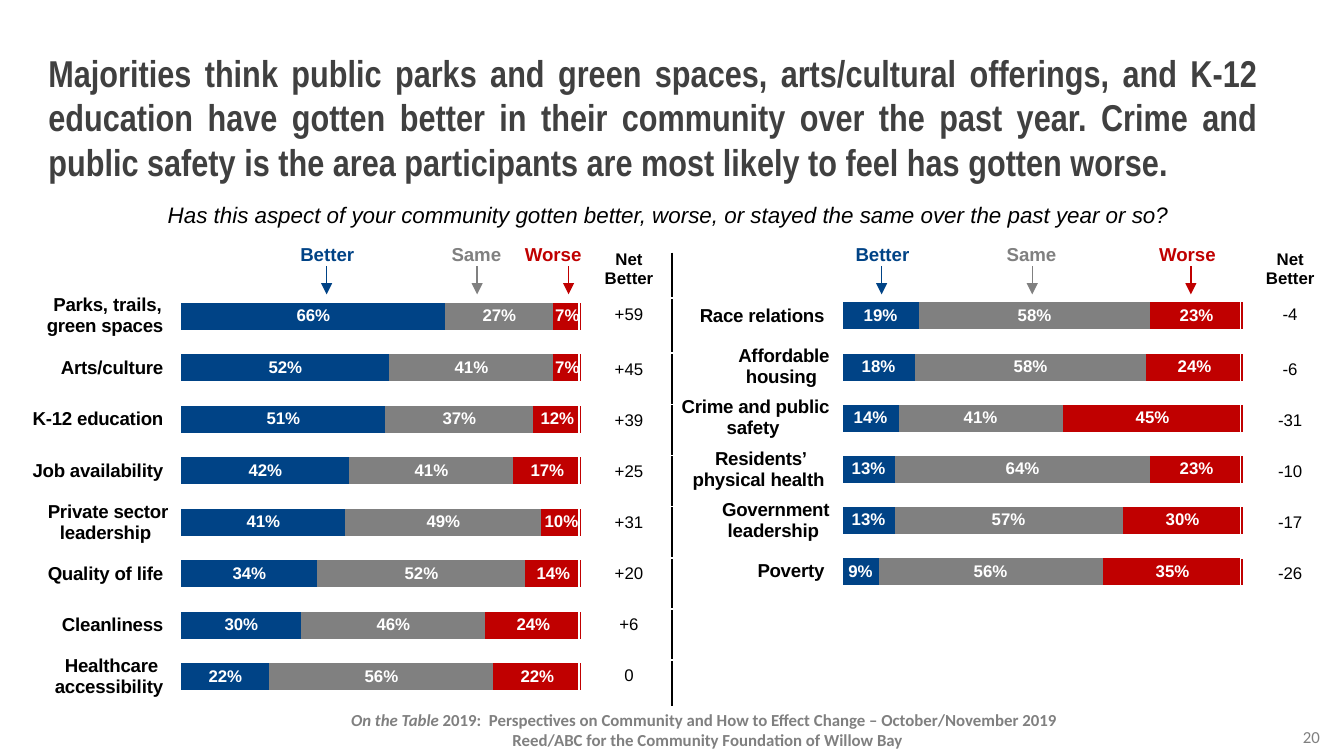
"""Build the survey slide on how aspects of the community have changed."""
from pptx import Presentation
from pptx.chart.data import CategoryChartData as Data
from pptx.dml.color import RGBColor as RGB
from pptx.enum.chart import XL_CHART_TYPE as Kind, XL_TICK_MARK as Mark
from pptx.enum.chart import XL_TICK_LABEL_POSITION as Spot
from pptx.enum.shapes import MSO_CONNECTOR as Link
from pptx.enum.text import MSO_ANCHOR as Anchor, MSO_AUTO_SIZE as Fit, PP_ALIGN as Align
from pptx.oxml import parse_xml
from pptx.oxml.ns import nsdecls, qn
from pptx.util import Pt
from lxml.etree import SubElement as Sub

BLUE = RGB(0x00, 0x43, 0x86)
GRAY = RGB(0x80, 0x80, 0x80)
RED = RGB(0xC0, 0x00, 0x00)
DARK = RGB(0x40, 0x40, 0x40)
BLACK = RGB(0x00, 0x00, 0x00)
WHITE = RGB(0xFF, 0xFF, 0xFF)


def write(para, text, size=9, color=BLACK, name="Arial", bold=False, ital=False, align=Align.CENTER):
    para.alignment = align
    run = para.add_run()
    run.text = text
    font = run.font
    font.size, font.name, font.bold, font.italic = Pt(size), name, bold, ital
    font.color.rgb = color


def draw(x, top, end, color, tip=False):
    line = slide.shapes.add_connector(Link.STRAIGHT, Pt(x), Pt(top), Pt(x), Pt(end))
    line.line.color.rgb = color
    line.line.width = Pt(0.75)
    props = line.element.spPr
    if tip:
        Sub(props.find(qn("a:ln")), qn("a:tailEnd"), type="triangle")
    Sub(props, qn("a:effectLst"))


deck = Presentation()
deck.slide_width, deck.slide_height = Pt(720), Pt(405)
slide = deck.slides.add_slide(deck.slide_layouts[5])

title = slide.shapes.title
title.left, title.top, title.width, title.height = Pt(18.7), Pt(28.8), Pt(662.4), Pt(67.7)
frame = title.text_frame
frame.auto_size, frame.word_wrap, frame.vertical_anchor = Fit.NONE, True, Anchor.MIDDLE
write(frame.paragraphs[0],
      "Majorities think public parks and green spaces, arts/cultural offerings, and K-12 education "
      "have gotten better in their community over the past year. Crime and public safety is the area "
      "participants are most likely to feel has gotten worse.",
      size=20, color=DARK, name="Arial Narrow", bold=True, align=Align.JUSTIFY)

foot = slide.shapes.add_textbox(Pt(177.8), Pt(376.6), Pt(400.3), Pt(28.8)).text_frame
foot.word_wrap = False
look = dict(color=GRAY, name="Calibri", bold=True)
write(foot.paragraphs[0], "On the Table", ital=True, **look)
write(foot.paragraphs[0], " 2019:  Perspectives on Community and How to Effect Change "
      "– October/November 2019 ", **look)
write(foot.add_paragraph(), " Reed/ABC for the Community Foundation of Willow Bay", **look)

page = slide.shapes.add_textbox(Pt(668.2), Pt(385.9), Pt(46), Pt(18)).text_frame
write(page.paragraphs[0], "20", color=GRAY, name="Calibri", align=Align.RIGHT)

ask = slide.shapes.add_textbox(Pt(42.5), Pt(104.4), Pt(635), Pt(21.6)).text_frame
ask.word_wrap = True
write(ask.paragraphs[0], "Has this aspect of your community gotten better, worse, "
      "or stayed the same over the past year or so? ", size=12, ital=True)

draw(360, 135.4, 378, BLACK)

keys = [("Better", BLUE, 44), ("Same", GRAY, 41), ("Worse", RED, 45.4)]
left = [
    ("Parks, trails, green spaces", 0.66, 0.27, 0.07, "+59"),
    ("Arts/culture", 0.52, 0.41, 0.07, "+45"),
    ("K-12 education", 0.51, 0.37, 0.12, "+39"),
    ("Job availability", 0.42, 0.41, 0.17, "+25"),
    ("Private sector leadership", 0.41, 0.49, 0.10, "+31"),
    ("Quality of life", 0.34, 0.52, 0.14, "+20"),
    ("Cleanliness", 0.30, 0.46, 0.24, "+6"),
    ("Healthcare accessibility", 0.22, 0.56, 0.22, "0"),
]
right = [
    ("Race relations", 0.19, 0.58, 0.23, "-4"),
    ("Affordable housing", 0.18, 0.58, 0.24, "-6"),
    ("Crime and public safety", 0.14, 0.41, 0.45, "-31"),
    ("Residents’ physical health", 0.13, 0.64, 0.23, "-10"),
    ("Government leadership", 0.13, 0.57, 0.30, "-17"),
    ("Poverty", 0.09, 0.56, 0.35, "-26"),
]
sides = [
    (10.8, left, 0.82, [175.3, 255.2, 296.3], [175, 255.6, 304.6]),
    (365, right, 0.61, [472.7, 552.6, 636.1], [472.3, 553, 638]),
]

for x, rows, tall, mids, tips in sides:
    names, *parts, nets = zip(*rows)
    data = Data(number_format="0%")
    data.categories = [f"{name} " for name in reversed(names)]
    for num, part in enumerate(parts, 1):
        data.add_series(f"Series {num}", part[::-1])
    chart = slide.shapes.add_chart(Kind.BAR_STACKED, Pt(x), Pt(116.6), Pt(301), Pt(269.3), data).chart
    chart.has_legend = chart.has_title = False
    chart.font.size, chart.font.name = Pt(10), "Arial"
    chart.font.color.rgb = BLACK
    axis = chart.category_axis
    axis.format.line.fill.background()
    axis.major_tick_mark = Mark.OUTSIDE
    axis.tick_label_position = Spot.LOW
    font = axis.tick_labels.font
    font.size, font.name, font.bold = Pt(10), "Arial", True
    font.color.rgb = BLACK
    axis = chart.value_axis
    axis.minimum_scale, axis.maximum_scale = 0, 1
    axis.has_major_gridlines = axis.visible = False
    plot = chart.plots[0]
    plot.gap_width, plot.overlap, plot.vary_by_categories = 89, 100, False
    for bar, (_, color, _) in zip(plot.series, keys):
        bar.format.fill.solid()
        bar.format.fill.fore_color.rgb = color
        tags = bar.data_labels
        tags.show_value = True
        tags.number_format, tags.number_format_is_linked = "0%", False
        tags.font.size, tags.font.name, tags.font.bold = Pt(9), "Arial", True
        tags.font.color.rgb = WHITE
    area = chart.element.xpath("c:chart/c:plotArea")[0]
    for old in area.findall(qn("c:layout")):
        area.remove(old)
    area.insert(0, parse_xml(
        f'<c:layout {nsdecls("c")}><c:manualLayout><c:layoutTarget val="inner"/>'
        '<c:xMode val="edge"/><c:yMode val="edge"/><c:x val="0.287"/><c:y val="0.145"/>'
        f'<c:w val="0.712"/><c:h val="{tall}"/></c:manualLayout></c:layout>'))

    count = len(rows) + 1
    table = slide.shapes.add_table(count, 1, Pt(x + 299.5), Pt(130.3), Pt(53.3), Pt(27.6 * count)).table
    table.first_row = table.horz_banding = False
    for num, net in enumerate(["Net Better", *nets]):
        table.rows[num].height = Pt(29.5 if num < 2 else 27.4)
        cell = table.cell(num, 0)
        cell.fill.background()
        write(cell.text_frame.paragraphs[0], net, bold=num == 0)

    for (word, color, wide), mid, tip in zip(keys, mids, tips):
        box = slide.shapes.add_textbox(Pt(mid - wide / 2), Pt(126.7), Pt(wide), Pt(19.4)).text_frame
        box.word_wrap = False
        write(box.paragraphs[0], word, size=10, color=color, bold=True)
        draw(tip, 142.6, 157.7, color, tip=True)

deck.save("out.pptx")
